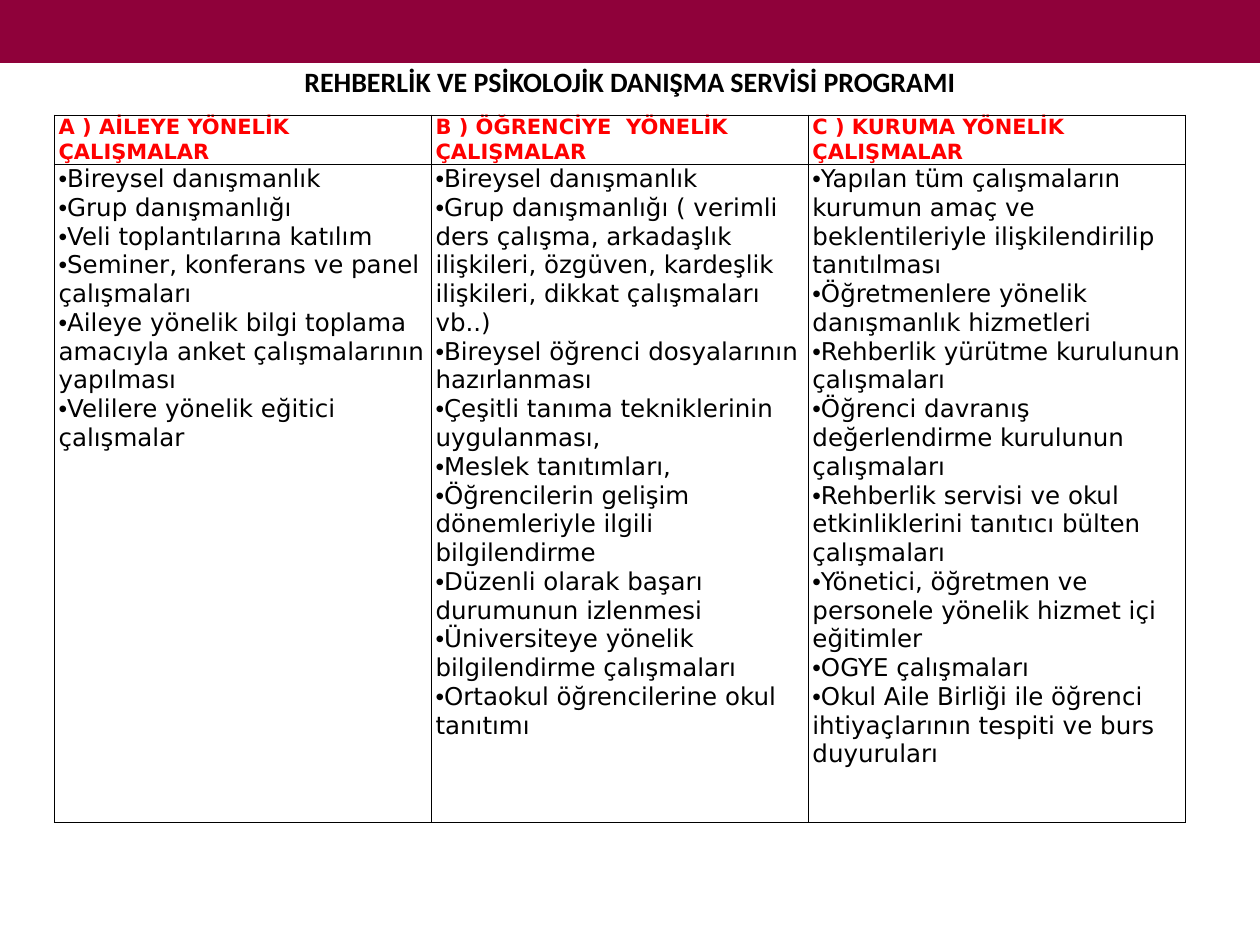
from dataclasses import dataclass

from lxml import etree
from pptx import Presentation
from pptx.dml.color import RGBColor
from pptx.enum.shapes import MSO_SHAPE
from pptx.enum.text import MSO_ANCHOR, MSO_AUTO_SIZE, PP_ALIGN
from pptx.oxml.ns import qn
from pptx.util import Pt

RECTANGLE = MSO_SHAPE.RECTANGLE
MIDDLE = MSO_ANCHOR.MIDDLE
CENTER = PP_ALIGN.CENTER
NO_AUTOFIT = MSO_AUTO_SIZE.NONE
TITLE_ONLY = 5


@dataclass(frozen=True)
class Theme:
    banner: RGBColor = RGBColor(0x8F, 0x01, 0x3A)
    text: RGBColor = RGBColor(0, 0, 0)
    heading: RGBColor = RGBColor(0xFF, 0, 0)
    border: str = "000000"
    title_font: str = "Calibri"
    table_font: str = "DejaVu Sans"
    bullet_font: str = "Arial"
    title_size: int = 16
    heading_size: int = 12
    body_size: int = 14


theme = Theme()

TITLE = "REHBERLİK VE PSİKOLOJİK DANIŞMA SERVİSİ PROGRAMI"
PROGRAM = {
    "A ) AİLEYE YÖNELİK ÇALIŞMALAR": [
        "Bireysel danışmanlık",
        "Grup danışmanlığı",
        "Veli toplantılarına katılım",
        "Seminer, konferans ve panel çalışmaları",
        "Aileye yönelik bilgi toplama amacıyla anket çalışmalarının yapılması",
        "Velilere yönelik eğitici çalışmalar",
    ],
    "B ) ÖĞRENCİYE  YÖNELİK ÇALIŞMALAR": [
        "Bireysel danışmanlık",
        "Grup danışmanlığı ( verimli ders çalışma, arkadaşlık ilişkileri, "
        "özgüven, kardeşlik ilişkileri, dikkat çalışmaları vb..)",
        "Bireysel öğrenci dosyalarının hazırlanması",
        "Çeşitli tanıma tekniklerinin uygulanması,",
        "Meslek tanıtımları,",
        "Öğrencilerin gelişim dönemleriyle ilgili bilgilendirme",
        "Düzenli olarak başarı durumunun izlenmesi",
        "Üniversiteye yönelik bilgilendirme çalışmaları",
        "Ortaokul öğrencilerine okul tanıtımı",
    ],
    "C ) KURUMA YÖNELİK ÇALIŞMALAR": [
        "Yapılan tüm çalışmaların kurumun amaç ve beklentileriyle "
        "ilişkilendirilip tanıtılması",
        "Öğretmenlere yönelik danışmanlık hizmetleri",
        "Rehberlik yürütme kurulunun çalışmaları",
        "Öğrenci davranış değerlendirme kurulunun çalışmaları",
        "Rehberlik servisi ve okul etkinliklerini tanıtıcı bülten çalışmaları",
        "Yönetici, öğretmen ve personele yönelik hizmet içi eğitimler",
        "OGYE çalışmaları",
        "Okul Aile Birliği ile öğrenci ihtiyaçlarının tespiti ve burs duyuruları",
    ],
}


def format_font(paragraph, name, size, color, bold):
    for run in paragraph.runs:
        run.font.name = name
        run.font.size = Pt(size)
        run.font.color.rgb = color
        run.font.bold = bold


def style_cell(cell):
    """Give the cell narrow margins, a thin border all round and no fill."""
    cell.margin_left = cell.margin_right = Pt(2.3)
    cell.margin_top = cell.margin_bottom = 0
    properties = cell._tc.get_or_add_tcPr()
    for side in ("a:lnL", "a:lnR", "a:lnT", "a:lnB"):
        line = etree.SubElement(properties, qn(side), w=str(Pt(1)))
        solid = etree.SubElement(line, qn("a:solidFill"))
        etree.SubElement(solid, qn("a:srgbClr"), val=theme.border)
    cell.fill.background()


presentation = Presentation()
presentation.slide_width = Pt(720)
presentation.slide_height = Pt(540)
slide = presentation.slides.add_slide(presentation.slide_layouts[TITLE_ONLY])

# Table: one column per audience, headings above bulleted activities
table = slide.shapes.add_table(
    2, len(PROGRAM), Pt(31.2), Pt(65.95), Pt(646.2), Pt(404)
).table
table.first_row = False
table.horz_banding = False
table.rows[0].height = Pt(28)
table.rows[1].height = Pt(376)

for index, (heading, activities) in enumerate(PROGRAM.items()):
    table.columns[index].width = Pt(215.4)
    heading_cell, activity_cell = table.cell(0, index), table.cell(1, index)
    style_cell(heading_cell)
    style_cell(activity_cell)

    heading_cell.text_frame.text = heading
    format_font(heading_cell.text_frame.paragraphs[0], theme.table_font,
                theme.heading_size, theme.heading, True)

    activity_cell.text_frame.text = "\n".join(activities)
    for paragraph in activity_cell.text_frame.paragraphs:
        format_font(paragraph, theme.table_font, theme.body_size, theme.text, False)
        bullet_properties = paragraph._p.get_or_add_pPr()
        etree.SubElement(bullet_properties, qn("a:buFont"), typeface=theme.bullet_font)
        etree.SubElement(bullet_properties, qn("a:buChar"), char="•")

# Banner across the top
banner = slide.shapes.add_shape(RECTANGLE, 0, 0, Pt(720), Pt(36))
banner.shadow.inherit = False
banner.fill.solid()
banner.fill.fore_color.rgb = theme.banner
banner.line.fill.background()

# Title, brought in front of the banner
title = slide.shapes.title
title.left, title.top, title.width, title.height = Pt(36), Pt(21.6), Pt(648), Pt(49.7)
title.text_frame.text = TITLE
title.text_frame.word_wrap = True
title.text_frame.auto_size = NO_AUTOFIT
title.text_frame.vertical_anchor = MIDDLE
title_paragraph = title.text_frame.paragraphs[0]
title_paragraph.alignment = CENTER
format_font(title_paragraph, theme.title_font, theme.title_size, theme.text, True)
slide.shapes._spTree.append(title._element)

presentation.save("out.pptx")
